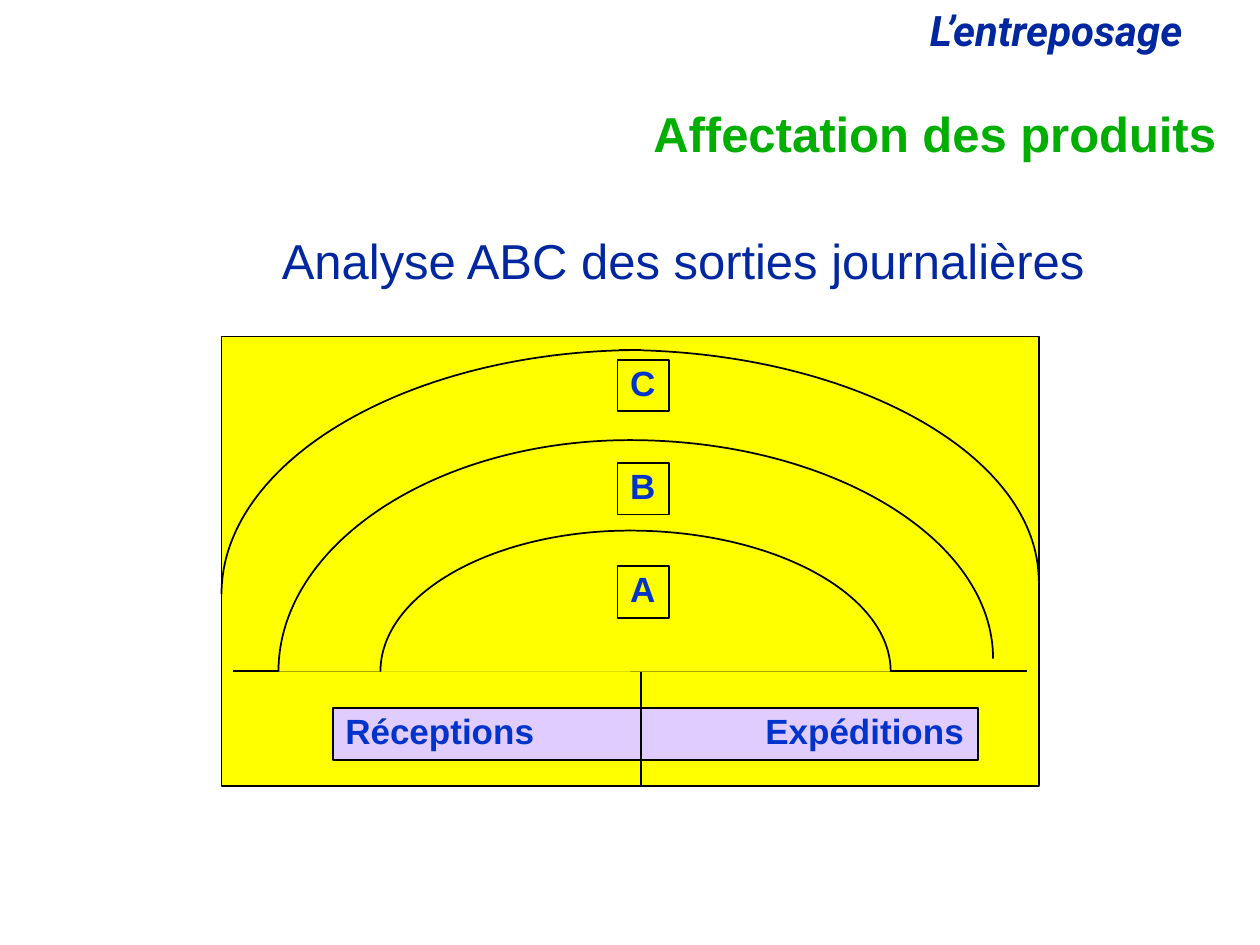
from copy import deepcopy
from dataclasses import dataclass

from lxml.etree import SubElement
from pptx import Presentation
from pptx.dml.color import RGBColor
from pptx.enum.shapes import MSO_CONNECTOR, MSO_SHAPE
from pptx.enum.text import MSO_ANCHOR, MSO_AUTO_SIZE, PP_ALIGN
from pptx.oxml.ns import qn
from pptx.util import Pt

COLORS = {
    "navy": "00279F",
    "green": "00AE00",
    "blue": "0033CC",
    "yellow": "FFFF00",
    "lilac": "E0CCFF",
    "black": "000000",
}
ROUNDNESS = 0.55


@dataclass(frozen=True)
class Area:
    left: float
    top: float
    width: float
    height: float

    def lengths(self) -> tuple:
        return Pt(self.left), Pt(self.top), Pt(self.width), Pt(self.height)


@dataclass(frozen=True)
class Style:
    size: float
    color: str
    bold: bool = False
    italic: bool = False
    name: str = "Arial"


@dataclass(frozen=True)
class Quarter:
    area: Area
    side: str


LABEL = Style(20, "blue", bold=True)
WAREHOUSE = Area(126.6, 192.4, 467, 257)
DOCKS = Area(190.2, 404.6, 368.6, 29.6)
DOCK_TABS = (120, 180, 240)
ZONES = ("A", "B", "C")
ZONE_TOP, ZONE_STEP, ZONE_LEFT, ZONE_SIZE = 323.5, -59, 352.9, 29.5
QUARTERS = (
    Quarter(Area(353.8, 200, 239.8, 132.2), "right"),
    Quarter(Area(126.6, 200, 239.8, 139.6), "left"),
    Quarter(Area(360, 251.5, 207.5, 124.8), "right"),
    Quarter(Area(159.1, 251.5, 200.9, 132.3), "left"),
    Quarter(Area(360, 303.2, 149, 80.6), "right"),
    Quarter(Area(217.4, 303.2, 142.6, 80.6), "left"),
)


def color(key: str) -> RGBColor:
    return RGBColor.from_string(COLORS[key])


def paint(shape, fill: str) -> None:
    shape.shadow.inherit = False
    shape.fill.solid()
    shape.fill.fore_color.rgb = color(fill)
    shape.line.color.rgb = color("black")
    shape.line.width = Pt(1)


def write(shape, text: str, style: Style, align=PP_ALIGN.LEFT, wrap=True,
          anchor=MSO_ANCHOR.TOP, indent: float = 0, tabs: tuple = ()) -> None:
    frame = shape.text_frame
    frame.word_wrap = wrap
    frame.vertical_anchor = anchor
    frame.auto_size = MSO_AUTO_SIZE.NONE if wrap else MSO_AUTO_SIZE.SHAPE_TO_FIT_TEXT
    para = frame.paragraphs[0]
    para.text = text
    para.alignment = align
    para.line_spacing = 0.9
    properties = para._p.get_or_add_pPr()
    if indent:
        properties.set("marL", str(Pt(indent)))
        properties.set("indent", "0")
    if tabs:
        stops = SubElement(properties, qn("a:tabLst"))
        for position in tabs:
            SubElement(stops, qn("a:tab"), pos=str(Pt(position)), algn="l")
    font = para.font
    font.name = style.name
    font.size = Pt(style.size)
    font.bold = style.bold
    font.italic = style.italic
    font.color.rgb = color(style.color)


def add_text(page, area: Area, text: str, style: Style, **layout) -> None:
    write(page.shapes.add_textbox(*area.lengths()), text, style, **layout)


def add_panel(page, area: Area, fill: str):
    panel = page.shapes.add_shape(MSO_SHAPE.RECTANGLE, *area.lengths())
    paint(panel, fill)
    return panel


def add_line(page, start: tuple, end: tuple) -> None:
    points = [Pt(value) for value in (*start, *end)]
    line = page.shapes.add_connector(MSO_CONNECTOR.STRAIGHT, *points)
    line.line.color.rgb = color("black")
    line.line.width = Pt(1)
    SubElement(line._element.spPr, qn("a:effectLst"))


def add_quarter(page, quarter: Quarter) -> None:
    left, top, width, height = quarter.area.lengths()
    right, bottom = left + width, top + height
    inner, outer = (left, right) if quarter.side == "right" else (right, left)
    handle_x = round(inner + (outer - inner) * ROUNDNESS)
    handle_y = round(bottom - height * ROUNDNESS)
    builder = page.shapes.build_freeform(inner, top)
    builder.add_line_segments([(handle_x, top), (outer, handle_y), (outer, bottom)], close=False)
    shape = builder.convert_to_shape()
    paint(shape, "yellow")

    arc = next(shape._element.iter(qn("a:path")))
    segments = arc.findall(qn("a:lnTo"))
    curve = SubElement(arc, qn("a:cubicBezTo"))
    for segment in segments:
        curve.append(segment[0])
        arc.remove(segment)
    wedge = deepcopy(arc)
    arc.set("fill", "none")
    wedge.set("stroke", "0")
    corner = SubElement(wedge, qn("a:lnTo"))
    SubElement(corner, qn("a:pt"), x=str(inner - left), y=str(height))
    SubElement(wedge, qn("a:close"))
    arc.addnext(wedge)


def main() -> None:
    deck = Presentation()
    deck.slide_width, deck.slide_height = Pt(720), Pt(540)
    page = deck.slides.add_slide(deck.slide_layouts[6])

    add_text(page, Area(524.2, 2.2, 190, 33), "L’entreposage",
             Style(24, "navy", bold=True, italic=True, name="Roboto"))
    add_text(page, Area(84.2, 60.1, 617.8, 36), "Affectation des produits",
             Style(28, "green", bold=True), align=PP_ALIGN.RIGHT, anchor=MSO_ANCHOR.MIDDLE)
    add_text(page, Area(84.2, 131.8, 563.8, 324), "Analyse ABC des sorties journalières",
             Style(28, "navy"), indent=69.8)

    add_panel(page, WAREHOUSE, "yellow")
    add_line(page, (133.2, 383.6), (586.8, 383.6))
    write(add_panel(page, DOCKS, "lilac"), "Réceptions\t\t\tExpéditions", LABEL,
          wrap=False, tabs=DOCK_TABS)
    for quarter in QUARTERS:
        add_quarter(page, quarter)
    add_line(page, (366.5, 384.2), (366.5, 449.4))
    for index, zone in enumerate(ZONES):
        area = Area(ZONE_LEFT, ZONE_TOP + index * ZONE_STEP, ZONE_SIZE, ZONE_SIZE)
        write(add_panel(page, area, "yellow"), zone, LABEL, wrap=False)

    deck.save("out.pptx")


if __name__ == "__main__":
    main()
